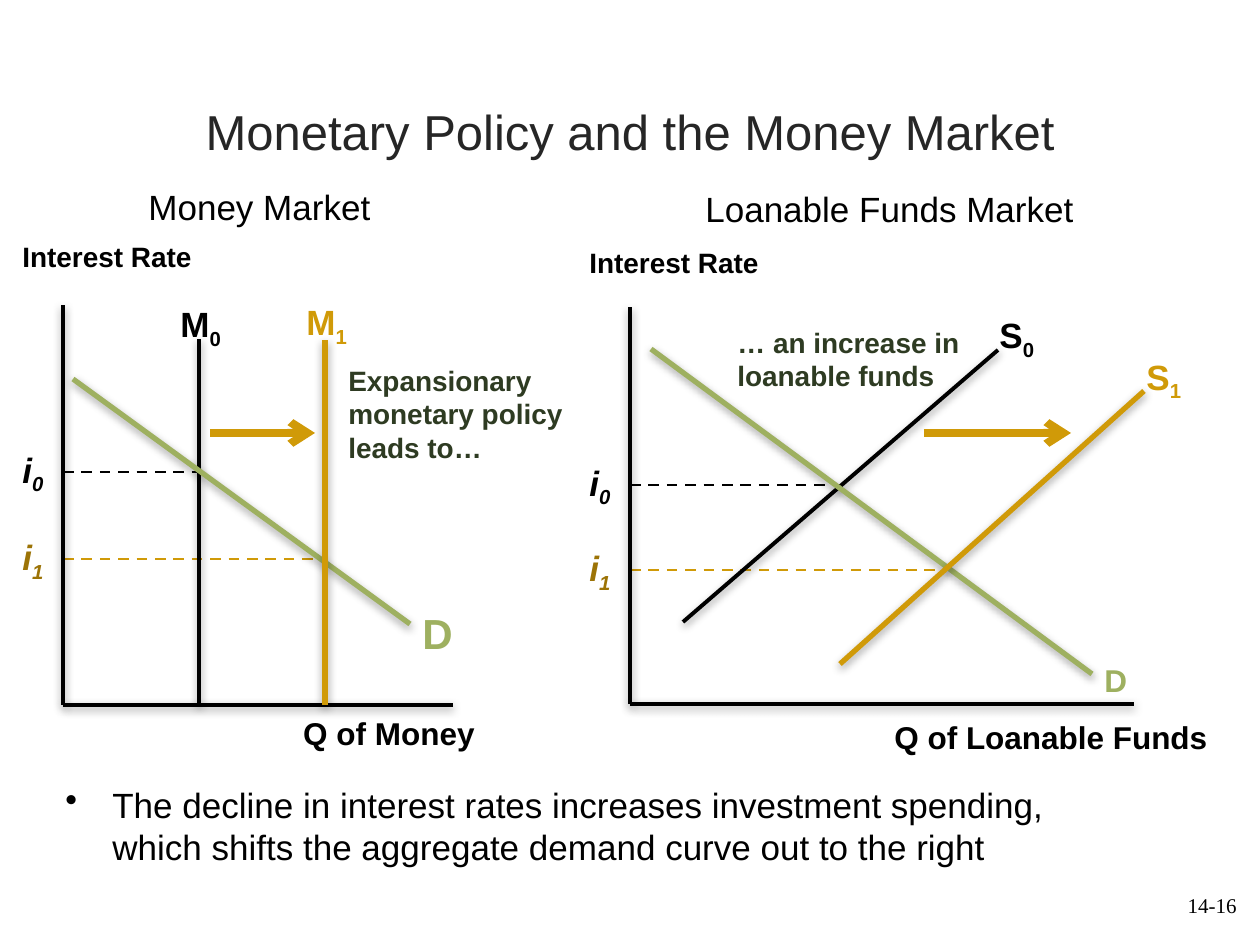
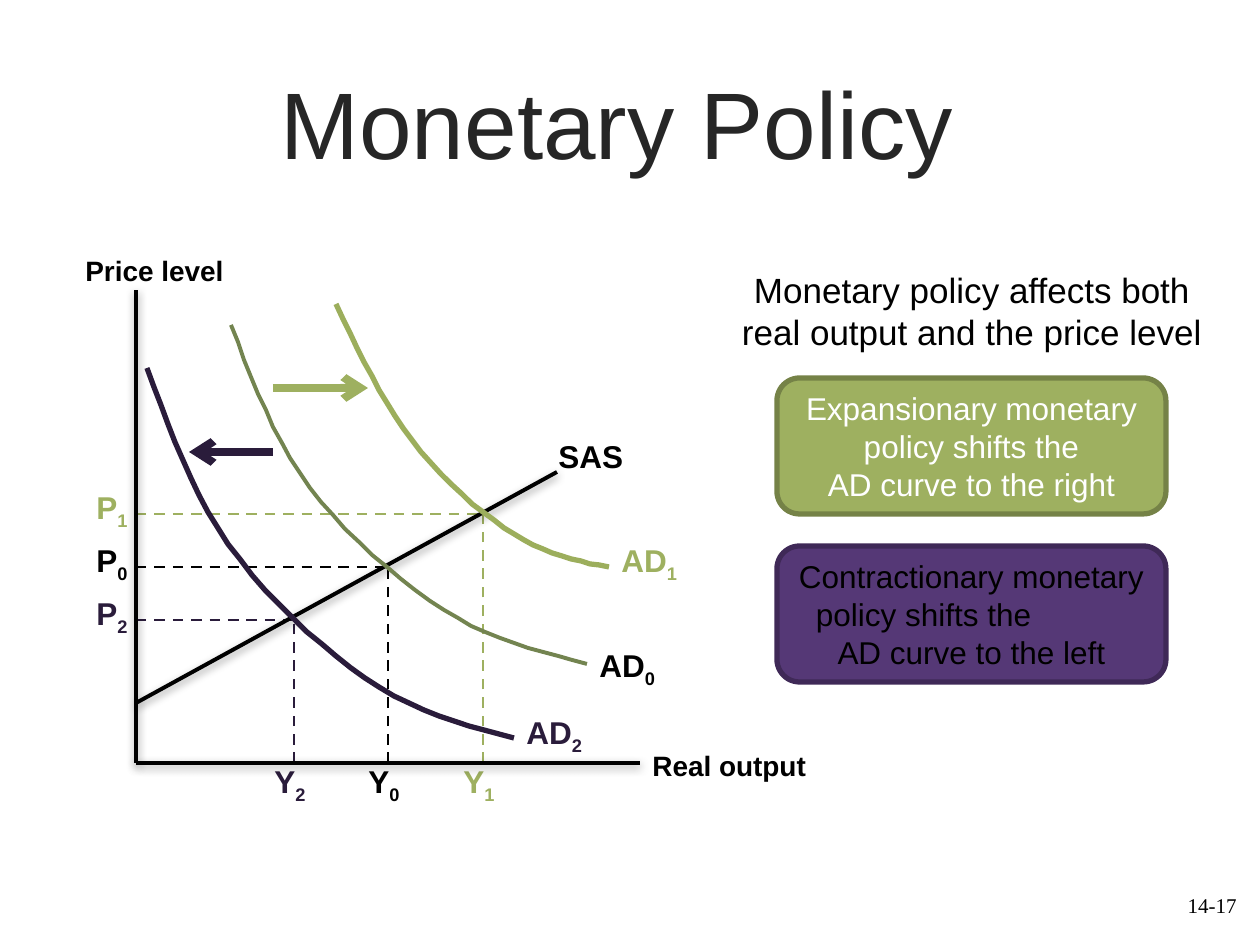
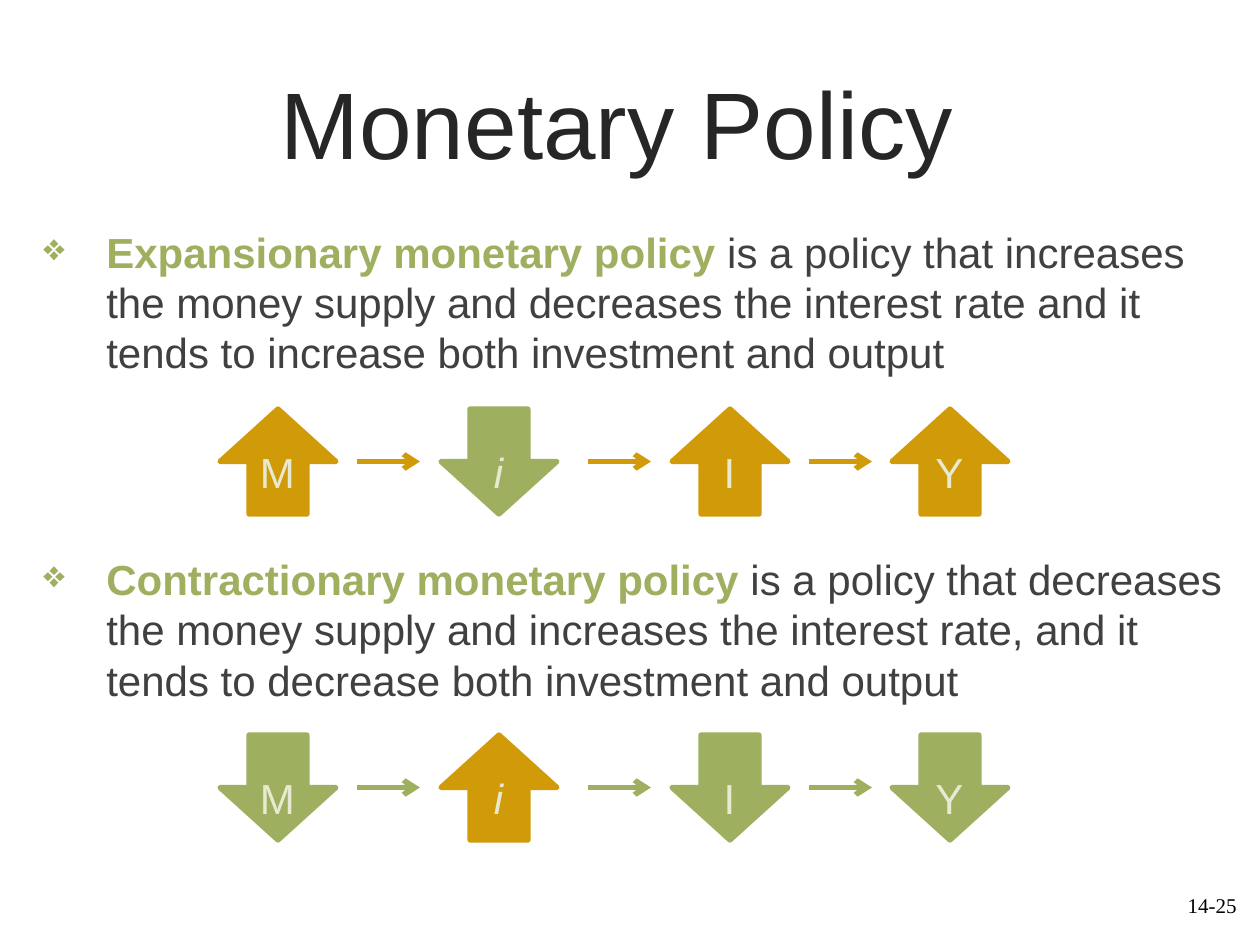
from lxml import etree
from pptx import Presentation
from pptx.dml.color import RGBColor
from pptx.enum.dml import MSO_LINE
from pptx.enum.shapes import MSO_CONNECTOR, MSO_SHAPE
from pptx.enum.text import MSO_ANCHOR, PP_ALIGN
from pptx.oxml.ns import qn
from pptx.util import Emu, Pt

STRAIGHT = MSO_CONNECTOR.STRAIGHT
DASH = MSO_LINE.DASH
ROUND, DOWN = MSO_SHAPE.ROUNDED_RECTANGLE, MSO_SHAPE.DOWN_ARROW
LEFT, CENTER, RIGHT = PP_ALIGN.LEFT, PP_ALIGN.CENTER, PP_ALIGN.RIGHT
TOP, MIDDLE, BOTTOM = MSO_ANCHOR.TOP, MSO_ANCHOR.MIDDLE, MSO_ANCHOR.BOTTOM

BLACK = RGBColor(0x00, 0x00, 0x00)
WHITE = RGBColor(0xFF, 0xFF, 0xFF)
INK = RGBColor(0x26, 0x26, 0x26)
GRAY = RGBColor(0x40, 0x40, 0x40)
GOLD = RGBColor(0xD0, 0x9A, 0x08)
BROWN = RGBColor(0x9C, 0x73, 0x06)
GREEN = RGBColor(0x9E, 0xB0, 0x60)
LIME = RGBColor(0x9C, 0xAE, 0x5C)
OLIVE = RGBColor(0x73, 0x84, 0x50)
MOSS = RGBColor(0x75, 0x82, 0x47)
PINE = RGBColor(0x2E, 0x3B, 0x22)
PLUM = RGBColor(0x2A, 0x1C, 0x3B)
PURPLE = RGBColor(0x55, 0x38, 0x76)
GRAPE = RGBColor(0x3F, 0x29, 0x57)
CREAM = RGBColor(0xE8, 0xE9, 0xD1)

SANS, SERIF = "Arial", "Times New Roman"
WIDTH, HEIGHT, DPI = 1260, 945, 126


def px(n):
    return Emu(round(n * 914400 / DPI))


# Text

def add_run(para, text, size, color, bold=False, italic=False, font=SANS):
    run = para.add_run()
    run.text = text
    run.font.name, run.font.size = font, Pt(size)
    run.font.bold, run.font.italic = bold, italic
    run.font.color.rgb = color
    return run


def add_box(shapes, x, y, w, h, anchor=TOP):
    frame = shapes.add_textbox(px(x), px(y), px(w), px(h)).text_frame
    frame.word_wrap = True
    frame.vertical_anchor = anchor
    return frame


def label(shapes, x, y, w, text, size, color=BLACK, bold=True, italic=False,
          align=LEFT, lines=1):
    """Text box as tall as its lines; what follows "_" is a subscript."""
    frame = add_box(shapes, x, y, w, round(size * 2.1 * lines + 13))
    para = frame.paragraphs[0]
    para.alignment = align
    base, _, sub = text.partition("_")
    add_run(para, base, size, color, bold, italic)
    if sub:
        run = add_run(para, sub, size, color, bold, italic)
        run._r.get_or_add_rPr().set("baseline", "-25000")
    return para


def indent(para, left, first=0):
    props = para._p.get_or_add_pPr()
    props.set("marL", str(px(left)))
    props.set("indent", str(px(first)))
    return props


def bullet(para, mark, hang, color, scale=100):
    props = indent(para, hang, -hang)
    tint = etree.SubElement(props, qn("a:buClr"))
    etree.SubElement(tint, qn("a:srgbClr"), val=str(color))
    etree.SubElement(props, qn("a:buSzPct"), val=str(scale * 1000))
    etree.SubElement(props, qn("a:buChar"), char=mark)


# Lines and curves

def add_line(shapes, start, end, color, width, dash=False, glow=False,
             tip=False):
    line = shapes.add_connector(STRAIGHT, *map(px, (*start, *end)))
    line.line.color.rgb = color
    line.line.width = Pt(width)
    if dash:
        line.line.dash_style = DASH
    if tip:
        etree.SubElement(line.line._get_or_add_ln(), qn("a:tailEnd"),
                         type="arrow")
    effects = etree.SubElement(line._element.spPr, qn("a:effectLst"))
    if glow:
        shade = etree.SubElement(effects, qn("a:outerShdw"), blurRad="63500",
                                 dist="20000", dir="5400000", rotWithShape="0")
        tint = etree.SubElement(shade, qn("a:srgbClr"), val=str(BLACK))
        etree.SubElement(tint, qn("a:alpha"), val="38000")


def bezier(a, b, c, d, t):
    s = 1 - t
    return tuple(s**3 * p + 3 * s * s * t * q + 3 * s * t * t * r + t**3 * u
                 for p, q, r, u in zip(a, b, c, d))


def add_curve(shapes, points, color, width, steps=10):
    dots = [bezier(*points[i:i + 4], k / steps)
            for i in range(0, len(points) - 1, 3)
            for k in range(1, steps + 1)]
    path = shapes.build_freeform(*points[0], scale=px(1))
    path.add_line_segments(dots, close=False)
    shape = path.convert_to_shape()
    shape.fill.background()
    shape.line.color.rgb = color
    shape.line.width = Pt(width)
    shape.shadow.inherit = False


def add_solid(shapes, kind, x, y, w, h, fill, edge):
    shape = shapes.add_shape(kind, *map(px, (x, y, w, h)))
    shape.fill.solid()
    shape.fill.fore_color.rgb = fill
    shape.line.color.rgb = edge
    shape.line.width = Pt(3)
    shape.shadow.inherit = False
    return shape


# Parts shared by the slides

def new_slide(deck, title, size, box, number):
    shapes = deck.slides.add_slide(deck.slide_layouts[6]).shapes
    para = add_box(shapes, *box, MIDDLE).paragraphs[0]
    para.alignment = CENTER
    add_run(para, title, size, INK)
    para = add_box(shapes, 987, 861, 262, 63, BOTTOM).paragraphs[0]
    para.alignment = RIGHT
    add_run(para, number, 12, BLACK, font=SERIF)
    return shapes


def axes(shapes, x, y, w, h):
    for end in ((x, y), (x + w, y + h)):
        add_line(shapes, (x, y + h), end, BLACK, 2, glow=True)


def market(shapes, box, rates, lines, arrow, labels):
    """Axes, dashed rates (reach, height), curves, shift arrow and labels."""
    x, y, _, _ = box
    for (reach, drop), color in zip(rates, (BLACK, GOLD)):
        add_line(shapes, (x, y + drop), (x + reach, y + drop), color, 1.5,
                 dash=True)
    axes(shapes, *box)
    for x1, y1, x2, y2, color, width in lines:
        add_line(shapes, (x + x1, y + y1), (x + x2, y + y2), color, width,
                 glow=True)
    start, end, level = arrow
    add_line(shapes, (x + start, y + level), (x + end, y + level), GOLD, 4.5,
             tip=True)
    for dx, dy, w, text, size, color in labels:
        label(shapes, x + dx, y + dy, w, text, size, color)
    for (_, drop), text, color in zip(rates, ("i_0", "i_1"), (BLACK, BROWN)):
        label(shapes, x - 53, y + drop - 30, 116, text, 20, color, italic=True)


# Slide 1

def money(shapes, box):
    x, y, _, h = box
    market(shapes, box, [(136, 167), (262, 254)],
           [(136, h, 136, 34, BLACK, 2.25),
            (10, 74, 347, 319, GREEN, 3),
            (262, h, 262, 35, GOLD, 3)],
           (147, 252, 128),
           [(-53, -72, 231, "Interest Rate", 16, BLACK),
            (105, -9, 73, "M_0", 20, BLACK),
            (231, -11, 73, "M_1", 20, GOLD),
            (347, 296, 84, "D", 24, GREEN)])
    label(shapes, x + 73, y - 126, 368, "Money Market", 20, bold=False)
    label(shapes, x + 221, y + 403, 210, "Q of Money", 18, align=CENTER)
    label(shapes, x + 273, y + 52, 273,
          "Expansionary monetary policy leads to…", 16, PINE, lines=3)


def funds(shapes, box):
    x, y, _, _ = box
    market(shapes, box, [(210, 178), (315, 263)],
           [(53, 315, 368, 43, BLACK, 2.25),
            (21, 42, 462, 367, GREEN, 3),
            (210, 357, 514, 84, GOLD, 3)],
           (294, 441, 126),
           [(-53, -68, 231, "Interest Rate", 16, BLACK),
            (357, 0, 63, "S_0", 20, BLACK),
            (504, 42, 63, "S_1", 20, GOLD),
            (462, 348, 63, "D", 18, GREEN),
            (252, 405, 357, "Q of Loanable Funds", 18, BLACK)])
    label(shapes, x + 63, y - 126, 494, "Loanable Funds Market", 20,
          bold=False)
    label(shapes, x + 95, y + 12, 273, "… an increase in loanable funds", 16,
          PINE, lines=2)


def markets_slide(deck):
    shapes = new_slide(deck, "Monetary Policy and the Money Market", 28,
                       (63, 84, 1134, 94), "14-16")
    money(shapes, (63, 305, 390, 400))
    funds(shapes, (630, 307, 504, 397))
    para = label(shapes, 53, 777, 1102,
                 "The decline in interest rates increases investment spending, "
                 "which shifts the aggregate demand curve out to the right",
                 20, bold=False, lines=2)
    bullet(para, "•", 47, BLACK)


# Slide 2

CURVES = [  # name, line colour, text colour, width, label lift, points
    ("AD_0", OLIVE, BLACK, 2.25, 24,
     [(95, 35), (117, 93), (139, 150), (174, 198), (209, 244), (261, 290),
      (308, 320), (353, 349), (402, 361), (451, 374)]),
    ("AD_2", PLUM, PLUM, 3, 31,
     [(11, 78), (34, 140), (57, 203), (92, 254), (129, 306), (182, 355),
      (229, 388), (277, 421), (328, 435), (378, 448)]),
    ("AD_1", LIME, GREEN, 3, 32,
     [(200, 14), (223, 63), (247, 112), (276, 150), (306, 189), (345, 224),
      (378, 244), (411, 264), (441, 272), (473, 277)]),
]
LEVELS = [("2", PLUM, 158, 330), ("0", BLACK, 252, 277),
          ("1", GREEN, 347, 224)]


def demand(shapes, box):
    x, y, w, h = box
    # Dashed guides with their price and output labels
    for name, color, dx, dy in LEVELS:
        meet = (x + dx, y + dy)
        for foot in ((x, y + dy), (x + dx, y + h)):
            add_line(shapes, foot, meet, color, 1.5, dash=True)
        label(shapes, x - 52, y + dy - 32, 84, "P_" + name, 18, color)
        label(shapes, x + dx - 32, y + h - 7, 84, "Y_" + name, 18, color)
    # Axes and supply
    axes(shapes, *box)
    label(shapes, x - 63, y - 43, 231, "Price level", 16)
    label(shapes, x + w, y + h - 21, 231, "Real output", 16)
    add_line(shapes, (x, y + 413), (x + 421, y + 182), BLACK, 2.25, glow=True)
    label(shapes, x + 410, y + 141, 136, "SAS", 18)
    # Demand curves and their shifts
    for name, color, ink, width, lift, points in CURVES:
        spots = [(x + dx, y + dy) for dx, dy in points]
        add_curve(shapes, spots, color, width)
        end_x, end_y = spots[-1]
        label(shapes, end_x, end_y - lift, 105, name, 18, ink)
    for end, level, color in ((232, 98, GREEN), (53, 162, PLUM)):
        add_line(shapes, (x + 137, y + level), (x + end, y + level), color,
                 4.5, tip=True)


def button(shapes, box, fill, edge, ink, lines):
    """Rounded box; each line is a text and its left margin, if any."""
    frame = add_solid(shapes, ROUND, *box, fill, edge).text_frame
    frame.word_wrap = True
    frame.vertical_anchor = MIDDLE
    for i, (text, left) in enumerate(lines):
        para = frame.add_paragraph() if i else frame.paragraphs[0]
        para.alignment = LEFT if left else CENTER
        if left:
            indent(para, left)
        add_run(para, text, 18, ink)


def effects(shapes, box):
    x, y, w, _ = box
    label(shapes, x, y, w,
          "Monetary policy affects both real output and the price level", 20,
          bold=False, align=CENTER, lines=2)
    button(shapes, (x + 52, y + 116, 389, 136), GREEN, MOSS, WHITE,
           [("Expansionary monetary policy shifts the", 0),
            ("AD curve to the right", 0)])
    button(shapes, (x + 52, y + 284, 389, 136), PURPLE, GRAPE, BLACK,
           [("Contractionary monetary", 0), ("policy shifts the", 20),
            ("AD curve to the left", 0)])


def demand_slide(deck):
    shapes = new_slide(deck, "Monetary Policy ", 54, (100, 43, 1060, 158),
                       "14-17")
    demand(shapes, (136, 290, 504, 473))
    effects(shapes, (725, 262, 494, 420))


# Slide 3

POLICIES = [
    ("Expansionary monetary policy ",
     "is a policy that increases the money supply and decreases the interest "
     "rate and it tends to increase both investment and output"),
    ("Contractionary monetary policy ",
     "is a policy that decreases the money supply and increases the interest "
     "rate, and it tends to decrease both investment and output"),
]
STEPS = [("M", 0), ("i", 221), ("I", 452), ("Y", 672)]


def policies(shapes, box):
    frame = add_box(shapes, *box)
    for i, (term, text) in enumerate(POLICIES):
        para = frame.add_paragraph() if i else frame.paragraphs[0]
        para.space_before = px(176 * i)
        bullet(para, "❖", 63, GREEN, 90)
        add_run(para, term, 24, GREEN, bold=True)
        add_run(para, text, 24, GRAY)


def chain(shapes, box, ups, color):
    """Row of block arrows; those named in ups point up."""
    x, y, _, h = box
    for gap in (137, 368, 589):
        add_line(shapes, (x + gap, y + h / 2), (x + gap + 63, y + h / 2),
                 color, 3, tip=True)
    for name, dx in STEPS:
        group = shapes.add_group_shape().shapes
        rise = name in ups
        tint = GOLD if rise else GREEN
        block = add_solid(group, DOWN, x + dx, y, 116, h, tint, tint)
        block.rotation = 180 if rise else 0
        label(group, x + dx + 21, y + 31, 73, name, 24, CREAM, bold=False,
              italic=name == "i", align=CENTER)


def policy_slide(deck):
    shapes = new_slide(deck, "Monetary Policy ", 54, (100, 43, 1060, 158),
                       "14-25")
    policies(shapes, (31, 220, 1208, 515))
    chain(shapes, (220, 409, 788, 105), "MIY", GOLD)
    chain(shapes, (220, 735, 788, 105), "i", GREEN)


def main():
    deck = Presentation()
    deck.slide_width, deck.slide_height = px(WIDTH), px(HEIGHT)
    markets_slide(deck)
    demand_slide(deck)
    policy_slide(deck)
    deck.save("out.pptx")


if __name__ == "__main__":
    main()
